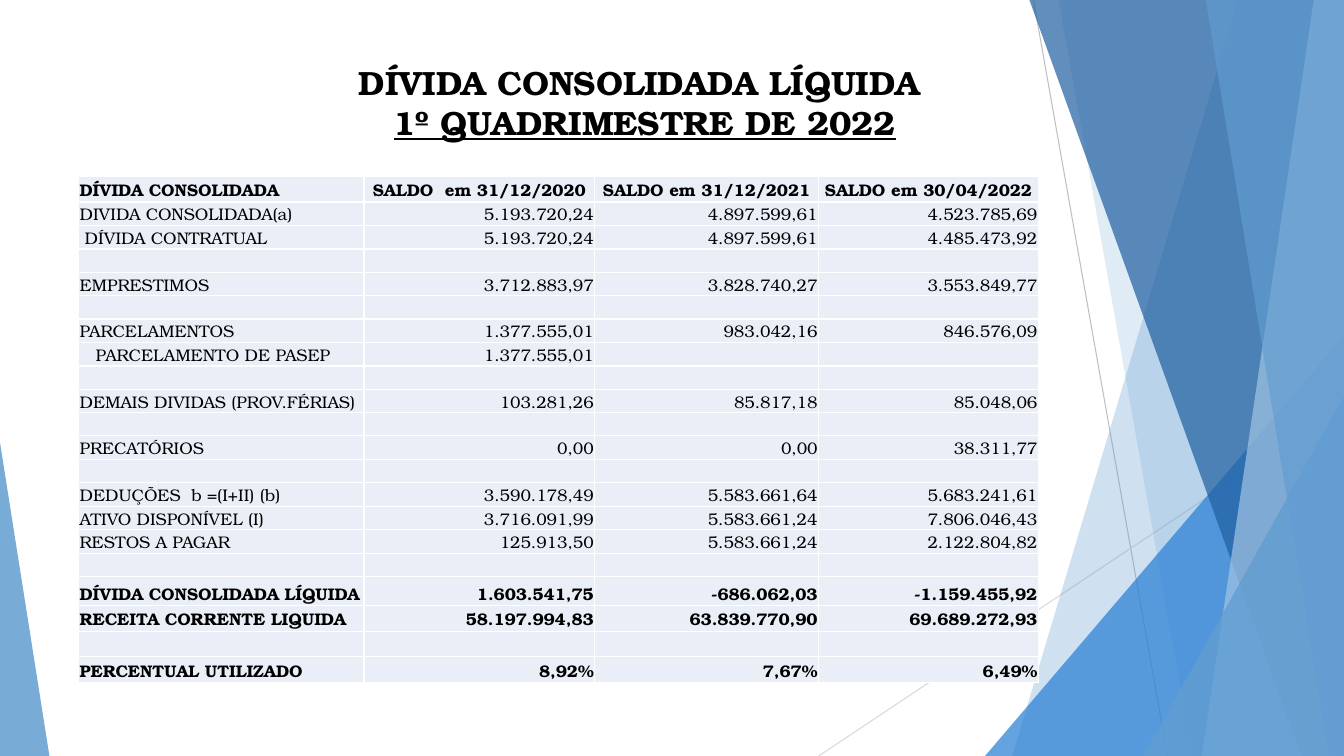
from lxml import etree
from pptx import Presentation
from pptx.dml.color import RGBColor
from pptx.enum.shapes import MSO_CONNECTOR, MSO_SHAPE
from pptx.enum.text import MSO_ANCHOR, MSO_AUTO_SIZE, PP_ALIGN
from pptx.oxml.ns import qn
from pptx.util import Inches, Pt

STRAIGHT, TRIANGLE = MSO_CONNECTOR.STRAIGHT, MSO_SHAPE.ISOSCELES_TRIANGLE
TOP, MIDDLE, BOTTOM = MSO_ANCHOR.TOP, MSO_ANCHOR.MIDDLE, MSO_ANCHOR.BOTTOM
LEFT, CENTER, RIGHT = PP_ALIGN.LEFT, PP_ALIGN.CENTER, PP_ALIGN.RIGHT
NO_FIT = MSO_AUTO_SIZE.NONE

WIDTH, HEIGHT = 13.33, 7.5
FONT = "TeX Gyre Bonum"
COLORS = {
    "text": "000000", "cell": "EAEFF7", "border": "FFFFFF",
    "line": "BFBFBF", "faint": "D9D9D9", "sky": "629DD1",
    "bright": "297FD5", "deep": "1F5FA0", "pale": "A1C4E3",
}

RAYS = [((10.25, 0), (11.58, HEIGHT), "line"), ((WIDTH, 4.03), (8.12, HEIGHT), "faint")]
BACK_SHARDS = [(12.28, 10.04, "sky", 30), (10.5, 11.83, "sky", 20)]
FRONT_SHARDS = [
    (10.21, 12.91, "deep", 70), (13.03, 11.92, "pale", 70), (11.96, 13.18, "sky", 65),
]

TABLE_BOX = (0.78, 1.75)
COLUMN_WIDTHS = [2.83, 2.29, 2.22, 2.18]
ROW_HEIGHT = 0.23
SPECIAL_HEIGHTS = {0: 0.25, 17: 0.29, 18: 0.25, 19: 0.25, 20: 0.26}
BOLD_ROWS = {0, 17, 18, 20}
INDENTS = {2: 0.05, 7: 0.16}
BLANK = ("", "", "", "")
ROWS = [
    ("DÍVIDA CONSOLIDADA", "SALDO  em 31/12/2020", "SALDO em 31/12/2021", "SALDO em 30/04/2022"),
    ("DIVIDA CONSOLIDADA(a)", "5.193.720,24", "4.897.599,61", "4.523.785,69"),
    ("DÍVIDA CONTRATUAL", "5.193.720,24", "4.897.599,61", "4.485.473,92"),
    BLANK,
    ("EMPRESTIMOS", "3.712.883,97", "3.828.740,27", "3.553.849,77"),
    BLANK,
    ("PARCELAMENTOS", "1.377.555,01", "983.042,16", "846.576,09"),
    ("PARCELAMENTO DE PASEP", "1.377.555,01", "", ""),
    BLANK,
    ("DEMAIS DIVIDAS (PROV.FÉRIAS)", "103.281,26", "85.817,18", "85.048,06"),
    BLANK,
    ("PRECATÓRIOS", "0,00", "0,00", "38.311,77"),
    BLANK,
    ("DEDUÇÕES  b =(I+II) (b)", "3.590.178,49", "5.583.661,64", "5.683.241,61"),
    ("ATIVO DISPONÍVEL (I)", "3.716.091,99", "5.583.661,24", "7.806.046,43"),
    ("RESTOS A PAGAR", "125.913,50", "5.583.661,24", "2.122.804,82"),
    BLANK,
    ("DÍVIDA CONSOLIDADA LÍQUIDA", "1.603.541,75", "-686.062,03", "-1.159.455,92"),
    ("RECEITA CORRENTE LIQUIDA", "58.197.994,83", "63.839.770,90", "69.689.272,93"),
    BLANK,
    ("PERCENTUAL UTILIZADO", "8,92%", "7,67%", "6,49%"),
]


def rgb(name):
    """Return the named palette colour."""
    return RGBColor.from_string(COLORS[name])


def add_span(para, text, size, bold=False, underline=False):
    """Append a formatted run to a paragraph."""
    span = para.add_run()
    span.text = text
    span.font.name, span.font.size = FONT, Pt(size)
    span.font.bold, span.font.underline = bold, underline
    span.font.color.rgb = rgb("text")


def tint(shape, color, opacity):
    """Give a shape a translucent fill without outline or shadow."""
    shape.shadow.inherit = False
    shape.line.fill.background()
    shape.fill.solid()
    shape.fill.fore_color.rgb = rgb(color)
    swatch = shape._element.spPr.find(".//" + qn("a:srgbClr"))
    etree.SubElement(swatch, qn("a:alpha"), val=str(opacity * 1000))


def add_ray(page, start, end, color):
    """Draw a thin line between two points."""
    ray = page.shapes.add_connector(STRAIGHT, *(Inches(n) for n in (*start, *end)))
    ray.line.color.rgb = rgb(color)
    ray.line.width = Pt(0.75)
    etree.SubElement(ray._element.spPr, qn("a:effectLst"))


def add_shard(page, top_x, bottom_x, color, opacity):
    """Draw a full-height shard running to the right edge of the slide."""
    builder = page.shapes.build_freeform(Inches(top_x), 0)
    corners = [(WIDTH, 0), (WIDTH, HEIGHT), (bottom_x, HEIGHT)]
    builder.add_line_segments([(Inches(x), Inches(y)) for x, y in corners])
    tint(builder.convert_to_shape(), color, opacity)


def add_peak(page, left, top, width, apex, color, opacity):
    """Draw a right triangle standing on the bottom edge of the slide."""
    box = (Inches(n) for n in (left, top, width, HEIGHT - top))
    peak = page.shapes.add_shape(TRIANGLE, *box)
    peak.adjustments[0] = apex
    tint(peak, color, opacity)


def add_scenery(page):
    """Draw the faceted background on both sides of the slide."""
    for ray in RAYS:
        add_ray(page, *ray)
    for shard in BACK_SHARDS:
        add_shard(page, *shard)
    add_peak(page, 9.77, 3.33, 3.56, 1, "bright", 72)
    for shard in FRONT_SHARDS:
        add_shard(page, *shard)
    add_peak(page, 11.34, 3.93, 1.99, 1, "sky", 80)
    add_peak(page, 0, 4.39, 0.49, 0, "sky", 85)


def add_title(page, left, top, width, height):
    """Place the two-line heading in the title placeholder."""
    title = page.shapes.title
    title.left, title.top = Inches(left), Inches(top)
    title.width, title.height = Inches(width), Inches(height)
    frame = title.text_frame
    frame.word_wrap, frame.auto_size = True, NO_FIT
    frame.vertical_anchor = TOP
    para = frame.paragraphs[0]
    para.alignment = CENTER
    add_span(para, "DÍVIDA CONSOLIDADA LÍQUIDA ", 24, bold=True)
    para.add_line_break()
    add_span(para, "1º QUADRIMESTRE DE 2022", 24, bold=True, underline=True)


def add_borders(cell):
    """Put a white one-point border on each side of a cell."""
    properties = cell._tc.get_or_add_tcPr()
    for position, side in enumerate(("a:lnL", "a:lnR", "a:lnT", "a:lnB")):
        edge = etree.Element(qn(side), w=str(Pt(1)))
        fill = etree.SubElement(edge, qn("a:solidFill"))
        etree.SubElement(fill, qn("a:srgbClr"), val=COLORS["border"])
        properties.insert(position, edge)


def fill_cell(cell, text, row, column):
    """Format one cell of the debt table and write its text."""
    cell.fill.solid()
    cell.fill.fore_color.rgb = rgb("cell")
    add_borders(cell)
    indent = INDENTS.get(row, 0) if column == 0 else 0
    cell.margin_left = Inches(0.01 + indent)
    cell.margin_right = cell.margin_top = Inches(0.01)
    cell.margin_bottom = 0
    cell.vertical_anchor = MIDDLE if row == 0 and column else BOTTOM
    para = cell.text_frame.paragraphs[0]
    if text:
        para.alignment = LEFT if column == 0 else CENTER if row == 0 else RIGHT
        add_span(para, text, 12, bold=row in BOLD_ROWS)
    else:
        etree.SubElement(para._p, qn("a:endParaRPr"), sz="1000")


def add_debt_table(page, left, top):
    """Build the consolidated debt table at the given corner."""
    heights = [SPECIAL_HEIGHTS.get(row, ROW_HEIGHT) for row in range(len(ROWS))]
    box = (Inches(n) for n in (left, top, sum(COLUMN_WIDTHS), sum(heights)))
    table = page.shapes.add_table(len(ROWS), len(COLUMN_WIDTHS), *box).table
    table.first_row = table.horz_banding = False
    for column, width in zip(table.columns, COLUMN_WIDTHS):
        column.width = Inches(width)
    for row, (height, texts) in enumerate(zip(heights, ROWS)):
        table.rows[row].height = Inches(height)
        for column, text in enumerate(texts):
            fill_cell(table.cell(row, column), text, row, column)


def main():
    """Build and save the deck."""
    deck = Presentation()
    deck.slide_width, deck.slide_height = Inches(WIDTH), Inches(HEIGHT)
    page = deck.slides.add_slide(deck.slide_layouts[5])
    add_scenery(page)
    add_title(page, 1.75, 0.56, 9.29, 1.07)
    add_debt_table(page, *TABLE_BOX)
    deck.save("out.pptx")


if __name__ == "__main__":
    main()
